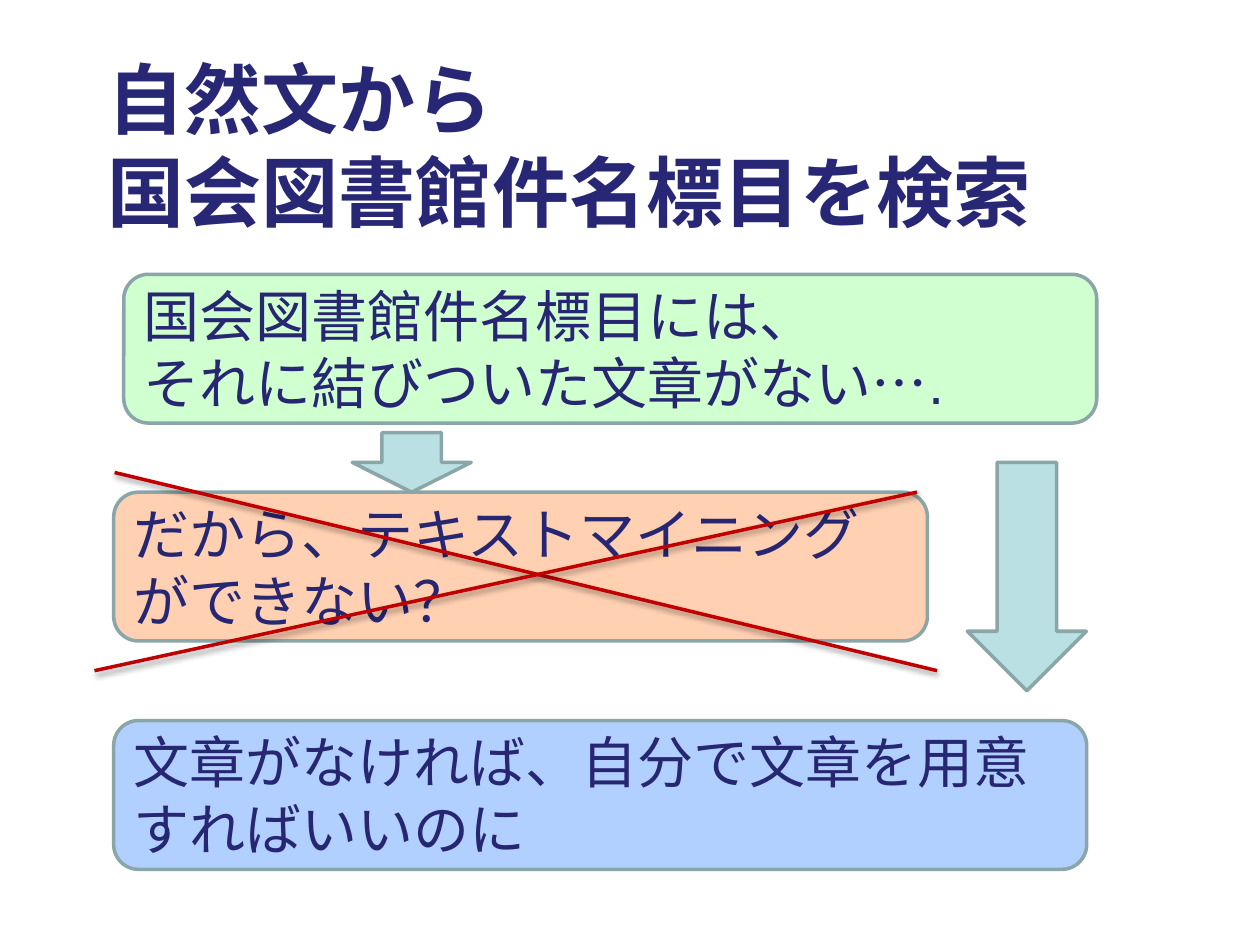
from lxml import etree
from pptx import Presentation
from pptx.dml.color import RGBColor
from pptx.enum.shapes import MSO_CONNECTOR, MSO_SHAPE
from pptx.enum.text import MSO_ANCHOR, MSO_AUTO_SIZE, PP_ALIGN
from pptx.oxml import parse_xml
from pptx.oxml.ns import nsdecls, qn
from pptx.util import Pt

ROUND, DOWN = MSO_SHAPE.ROUNDED_RECTANGLE, MSO_SHAPE.DOWN_ARROW
MIDDLE, LEFT = MSO_ANCHOR.MIDDLE, PP_ALIGN.LEFT
THEME = {
    "title": "272776", "text": "262673", "edge": "8AA6A8",
    "green": "66FF66", "orange": "FF6600", "blue": "0066FF",
    "arrow": "BBE0E3", "cross": "C00000",
    "font": "Arial", "lead": "Noto Sans CJK JP",
    "head": Pt(44), "body": Pt(32), "line": Pt(2), "alpha": 30,
}
SHADOW = (
    f'<a:effectLst {nsdecls("a")}>'
    '<a:outerShdw blurRad="39370" dist="20320" dir="5400000" rotWithShape="0">'
    '<a:srgbClr val="000000"><a:alpha val="38000"/></a:srgbClr>'
    '</a:outerShdw></a:effectLst>'
)


def style(font, **form):
    for key, value in form.items():
        setattr(font, key, value)


def draw(kind, box, fill, alpha=100):
    """Add a filled, outlined shape without shadow."""
    shape = slide.shapes.add_shape(kind, *map(Pt, box))
    shape.shadow.inherit = False
    shape.fill.solid()
    shape.fill.fore_color.rgb = RGBColor.from_string(THEME[fill])
    if alpha < 100:
        tone = shape.fill._xPr.find(".//" + qn("a:srgbClr"))
        etree.SubElement(tone, qn("a:alpha"), val=str(alpha * 1000))
    shape.line.color.rgb = RGBColor.from_string(THEME["edge"])
    shape.line.width = THEME["line"]
    return shape


deck = Presentation()
deck.slide_width, deck.slide_height = Pt(720), Pt(540)
slide = deck.slides.add_slide(deck.slide_layouts[5])

# Title
title = slide.shapes.title
title.left, title.top, title.width, title.height = map(Pt, (54, 37.5, 612, 90))
frame = title.text_frame
frame.auto_size, frame.vertical_anchor = MSO_AUTO_SIZE.NONE, MIDDLE
para = frame.paragraphs[0]
para.alignment = LEFT
for text, face in (("自然文から\v", "lead"), ("国会図書館件名標目を検索", "font")):
    part, *rest = text.split("\v")
    run = para.add_run()
    run.text = part
    style(run.font, name=THEME[face], size=THEME["head"], bold=True)
    run.font.color.rgb = RGBColor.from_string(THEME["title"])
    if rest:
        para.add_line_break()

# Statements
BOXES = [
    ((70.75, 156.75, 556, 85), "green",
     ["国会図書館件名標目には、", "それに結びついた文章がない…."]),
    ((65, 281.25, 465, 85), "orange",
     ["だから、テキストマイニングができない？"]),
    ((65, 411.75, 556, 85), "blue",
     ["文章がなければ、自分で文章を用意すればいいのに"]),
]
for box, fill, lines in BOXES:
    frame = draw(ROUND, box, fill, THEME["alpha"]).text_frame
    frame.word_wrap, frame.vertical_anchor = True, MIDDLE
    frame.text = "\n".join(lines)
    for para in frame.paragraphs:
        para.alignment = LEFT
        run = para.runs[0]
        style(run.font, name=THEME["font"], size=THEME["body"])
        run.font.color.rgb = RGBColor.from_string(THEME["text"])

# Arrows between statements
for box in ((201.25, 247.25, 68, 34), (552.75, 264.25, 68, 130.5)):
    draw(DOWN, box, "arrow")

# Cross over the middle statement
for ends in ((65.5, 270, 535.5, 383.25), (54, 383.25, 524, 281.25)):
    cross = slide.shapes.add_connector(MSO_CONNECTOR.STRAIGHT, *map(Pt, ends))
    cross.line.color.rgb = RGBColor.from_string(THEME["cross"])
    cross.line.width = THEME["line"]
    cross._element.spPr.append(parse_xml(SHADOW))

deck.save("out.pptx")
